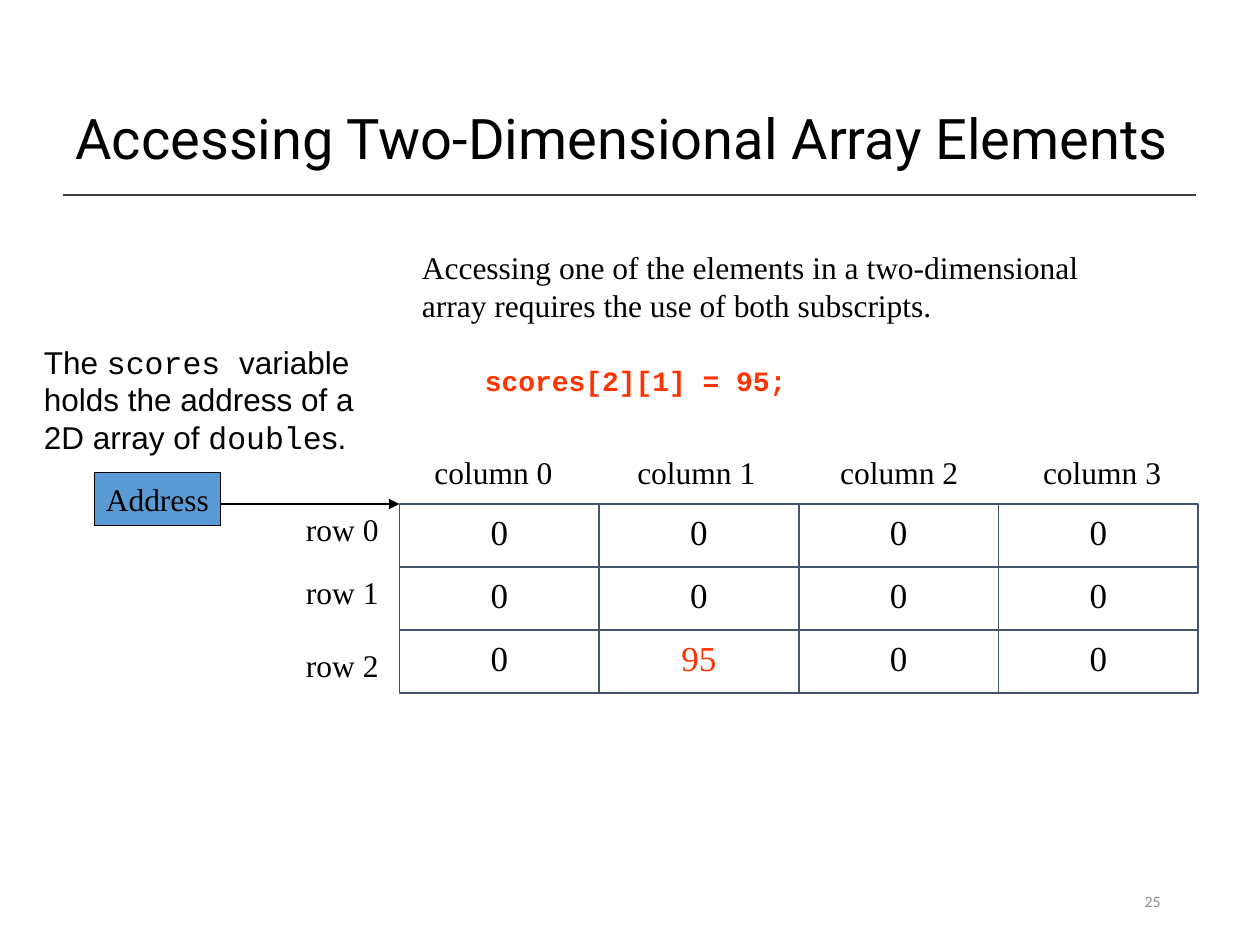
from dataclasses import dataclass

from lxml.etree import SubElement
from pptx import Presentation
from pptx.dml.color import RGBColor
from pptx.enum.shapes import MSO_CONNECTOR as Connector, MSO_SHAPE as Preset
from pptx.enum.text import MSO_ANCHOR as Anchor, MSO_AUTO_SIZE as AutoSize, PP_ALIGN as Align
from pptx.oxml.ns import qn
from pptx.util import Inches, Pt

COLORS = {
    "ink": "000000", "accent": "FF3300", "cell_border": "44546A",
    "address": "5B9BD5", "rule": "404040", "page": "8C8C8C",
}
SERIF, SANS, MONO = "Times New Roman", "Arial", "Courier New"

# The slide is a grid of 40 columns by 30 rows
COLS, ROWS = 40, 30
UNIT = Inches(0.25)


@dataclass(frozen=True)
class Box:
    """Place and size, in grid columns and rows."""
    col: float
    row: float
    cols: float
    rows: float

    def emu(self) -> list[int]:
        return [units(n) for n in (self.col, self.row, self.cols, self.rows)]


@dataclass(frozen=True)
class Style:
    size: float
    font: str | None = SERIF
    color: str = "ink"
    bold: bool = False
    align: Align = Align.LEFT


LABEL = Style(18)


def units(n: float) -> int:
    return round(n * UNIT)


def rgb(name: str) -> RGBColor:
    return RGBColor.from_string(COLORS[name])


def style_paragraph(paragraph, style: Style) -> None:
    font = paragraph.font
    font.size, font.bold = Pt(style.size), style.bold
    if style.font:
        font.name = style.font
    font.color.rgb = rgb(style.color)
    paragraph.alignment = style.align


def add_text(slide, box: Box, text: str, style: Style, *, wrap: bool = True,
             grow: bool = False, anchor: Anchor = Anchor.TOP):
    frame = slide.shapes.add_textbox(*box.emu()).text_frame
    frame.word_wrap, frame.vertical_anchor = wrap, anchor
    frame.auto_size = AutoSize.SHAPE_TO_FIT_TEXT if grow else AutoSize.NONE
    frame.text = text
    style_paragraph(frame.paragraphs[0], style)
    return frame


def add_rect(slide, box: Box, text: str, style: Style, border: str, width: float, *,
             fill: str | None = None, wrap: bool = True,
             anchor: Anchor = Anchor.TOP) -> None:
    rect = slide.shapes.add_shape(Preset.RECTANGLE, *box.emu())
    rect.shadow.inherit = False
    if fill:
        rect.fill.solid()
        rect.fill.fore_color.rgb = rgb(fill)
    else:
        rect.fill.background()
    rect.line.color.rgb, rect.line.width = rgb(border), Pt(width)
    frame = rect.text_frame
    frame.word_wrap, frame.vertical_anchor = wrap, anchor
    frame.text = text
    style_paragraph(frame.paragraphs[0], style)


def add_line(slide, start: tuple[float, float], end: tuple[float, float],
             color: str, width: float, arrow: bool = False) -> None:
    line = slide.shapes.add_connector(
        Connector.STRAIGHT, *(units(n) for n in (*start, *end)))
    line.line.color.rgb, line.line.width = rgb(color), Pt(width)
    if arrow:
        SubElement(line.line._get_or_add_ln(), qn("a:tailEnd"), type="triangle")
    SubElement(line._element.spPr, qn("a:effectLst"))


def add_heading(slide) -> None:
    add_line(slide, (2, 6.2), (37.96, 6.2), "rule", 1)
    title = add_text(slide, Box(2, 1.6, 36.52, 5.8),
                     "Accessing Two-Dimensional Array Elements",
                     Style(32, "Roboto"), anchor=Anchor.MIDDLE)
    title.paragraphs[0].line_spacing = 0.9


def add_explanation(slide) -> None:
    frame = add_text(slide, Box(13, 7.68, 22.32, 6.28),
                     "Accessing one of the elements in a two-dimensional "
                     "array requires the use of both subscripts.", LABEL, grow=True)
    frame.paragraphs[0].space_after = Pt(23)
    code = frame.add_paragraph()
    code.text, code.level = "scores[2][1] = 95;", 1
    style_paragraph(code, Style(16, MONO, "accent", bold=True))
    code._p.get_or_add_pPr().set("marL", str(units(2)))


def add_array(slide) -> None:
    left, top, cell_cols, cell_rows = 12.68, 16, 6.34, 2
    values = [[0, 0, 0, 0], [0, 0, 0, 0], [0, 95, 0, 0]]
    for r, row in enumerate(values):
        for c, value in enumerate(row):
            cell = Box(left + c * cell_cols, top + r * cell_rows, cell_cols, cell_rows)
            color = "accent" if value else "ink"
            add_rect(slide, cell, str(value), Style(20, color=color, align=Align.CENTER),
                     "cell_border", 1)
    # Row and column labels
    for r, label_row in enumerate((16, 18, 20.32)):
        add_text(slide, Box(9.32, label_row, 3.12, 1.6), f"row {r}", LABEL,
                 wrap=False, grow=True)
    for c in range(len(values[0])):
        add_text(slide, Box(13.4 + c * 6.44, 14.2, 4.56, 1.6), f"column {c}", LABEL,
                 wrap=False, grow=True)
    # Reference to the array
    add_rect(slide, Box(3, 15, 4, 1.68), "Address", Style(18, align=Align.CENTER),
             "ink", 0.75, fill="address", wrap=False, anchor=Anchor.MIDDLE)
    add_line(slide, (7, top), (left, top), "ink", 0.75, arrow=True)


def add_variable_note(slide) -> None:
    lines = [
        [("The ", SANS), ("scores ", MONO), ("variable", SANS)],
        [("holds the address of a", SANS)],
        [("2D array of ", SANS), ("double", MONO), ("s.", SANS)],
    ]
    frame = add_text(slide, Box(1, 10.68, 10.64, 4), "", LABEL, wrap=False, grow=True)
    for i, pieces in enumerate(lines):
        paragraph = frame.add_paragraph() if i else frame.paragraphs[0]
        style_paragraph(paragraph, Style(18, None))
        for text, font in pieces:
            run = paragraph.add_run()
            run.text, run.font.name = text, font


def main() -> None:
    deck = Presentation()
    deck.slide_width, deck.slide_height = COLS * UNIT, ROWS * UNIT
    slide = deck.slides.add_slide(deck.slide_layouts[6])
    add_heading(slide)
    add_explanation(slide)
    add_array(slide)
    add_variable_note(slide)
    # Page number
    add_text(slide, Box(28.24, 27.8, 9, 1.6), "25",
             Style(9, "Calibri", "page", align=Align.RIGHT), anchor=Anchor.MIDDLE)
    deck.save("out.pptx")


if __name__ == "__main__":
    main()
